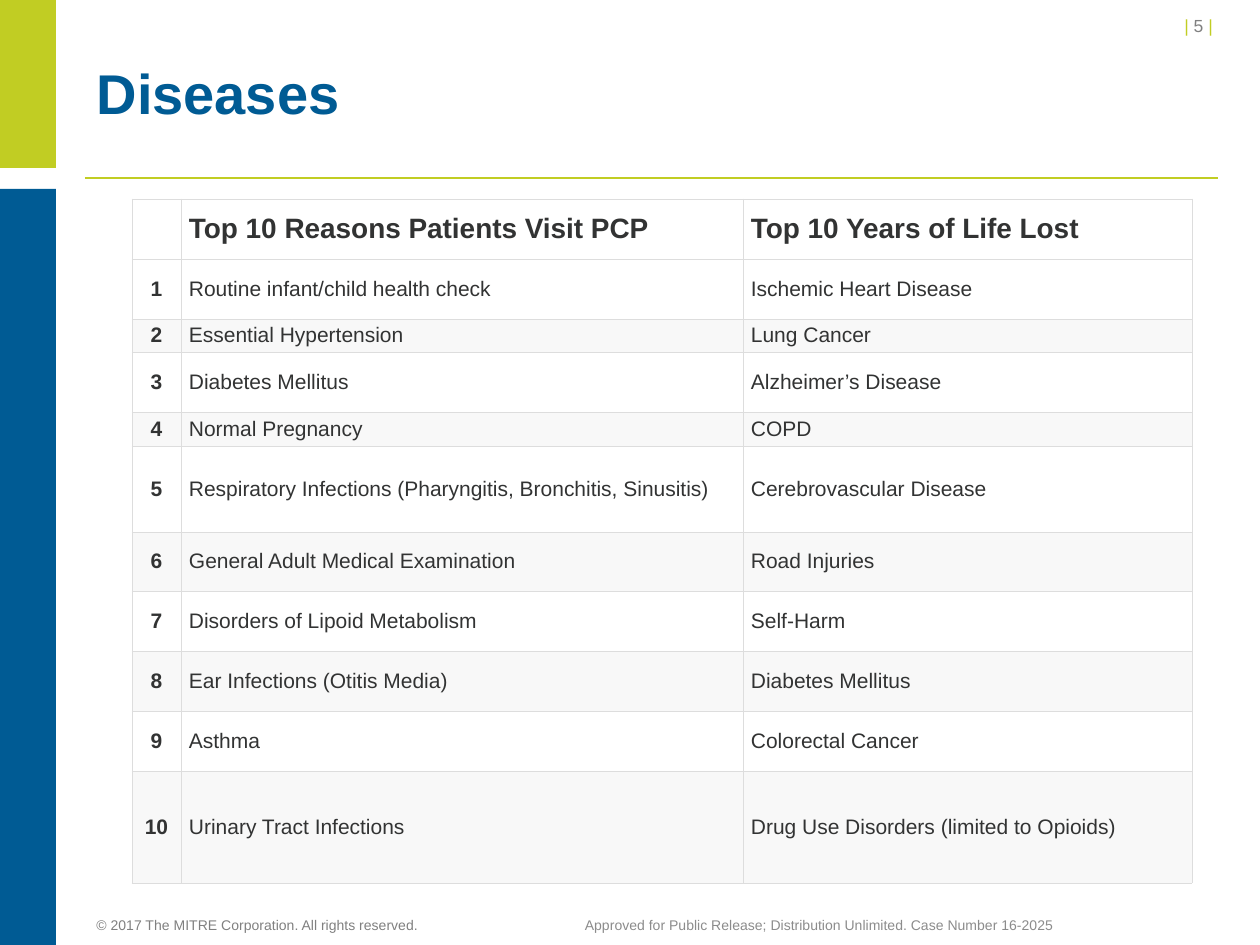
from lxml import etree
from pptx import Presentation
from pptx.dml.color import RGBColor
from pptx.enum.shapes import MSO_CONNECTOR, MSO_SHAPE
from pptx.enum.text import MSO_ANCHOR, PP_ALIGN
from pptx.oxml.ns import qn
from pptx.util import Emu, Pt

LEFT, MID, RIGHT = PP_ALIGN.LEFT, PP_ALIGN.CENTER, PP_ALIGN.RIGHT
TOP, CENTRE, LOW = MSO_ANCHOR.TOP, MSO_ANCHOR.MIDDLE, MSO_ANCHOR.BOTTOM
RECT, LINE = MSO_SHAPE.RECTANGLE, MSO_CONNECTOR.STRAIGHT

TITLE = "Diseases"
HEAD = ("", "Top 10 Reasons Patients Visit PCP", "Top 10 Years of Life Lost")
CAUSES = [
    ("Routine infant/child health check", "Ischemic Heart Disease"),
    ("Essential Hypertension", "Lung Cancer"),
    ("Diabetes Mellitus", "Alzheimer’s Disease"),
    ("Normal Pregnancy", "COPD"),
    ("Respiratory Infections (Pharyngitis, Bronchitis, Sinusitis)",
     "Cerebrovascular Disease"),
    ("General Adult Medical Examination", "Road Injuries"),
    ("Disorders of Lipoid Metabolism", "Self-Harm"),
    ("Ear Infections (Otitis Media)", "Diabetes Mellitus"),
    ("Asthma", "Colorectal Cancer"),
    ("Urinary Tract Infections", "Drug Use Disorders (limited to Opioids)"),
]
COLS = (49, 562, 449)
ROWS = (60, 60, 33, 60, 34, 86, 59, 60, 60, 60, 112)
BARS = [("lime", (0, 0, 56, 168)), ("blue", (0, 189, 56, 756))]
NOTES = [
    ((1009, 9, 221, 34), TOP, {"alignment": RIGHT, "space_after": Pt(6)},
     [("| ", "page", "lime"), ("5 ", "page", "grey"), ("| ", "page", "lime")]),
    ((84, 917, 372, 22), LOW, {"alignment": LEFT, "line_spacing": Pt(13)},
     [("© 2017 The MITRE Corporation. All rights reserved.", "foot", "grey")]),
    ((557, 917, 525, 22), LOW, {"alignment": MID, "line_spacing": Pt(13)},
     [("Approved for Public Release; Distribution Unlimited. "
       "Case Number 16-2025", "foot", "pale")]),
]
THEME = {
    "font": "Arial",
    "ink": {"lime": "C1CD23", "blue": "005B94", "grey": "808080",
            "pale": "8C8C8C", "text": "323333", "edge": "DDDDDD",
            "odd": "FFFFFF", "even": "F8F8F8"},
    "size": {"title": 32, "head": 16, "body": 12, "page": 10, "foot": 8},
}


def px(n):
    return Emu(n * 914400 // 126)


def ink(name):
    return RGBColor.from_string(THEME["ink"][name])


def apply(item, form):
    for key, value in form.items():
        setattr(item, key, value)


def place(item, box):
    apply(item, dict(zip(("left", "top", "width", "height"), map(px, box))))


def write(frame, runs, form, bold=False):
    para = frame.paragraphs[0]
    apply(para, form)
    for text, size, tone in runs:
        run = para.add_run()
        run.text = text
        apply(run.font, {"name": THEME["font"], "bold": bold,
                         "size": Pt(THEME["size"][size])})
        run.font.color.rgb = ink(tone)


def border(cell):
    props = cell._tc.get_or_add_tcPr()
    for side in ("lnL", "lnR", "lnT", "lnB"):
        line = etree.SubElement(props, qn(f"a:{side}"), w=str(Pt(0.5)))
        fill = etree.SubElement(line, qn("a:solidFill"))
        etree.SubElement(fill, qn("a:srgbClr"), val=THEME["ink"]["edge"])


def draw_frame(slide):
    rule = slide.shapes.add_connector(LINE, px(85), px(178), px(1218), px(178))
    rule.line.color.rgb = ink("lime")
    rule.line.width = Pt(1)
    etree.SubElement(rule._element.spPr, qn("a:effectLst"))
    for tone, box in BARS:
        bar = slide.shapes.add_shape(RECT, *map(px, box))
        bar.shadow.inherit = False
        bar.fill.solid()
        bar.fill.fore_color.rgb = ink(tone)
        bar.line.fill.background()
    for box, anchor, form, runs in NOTES:
        frame = slide.shapes.add_textbox(*map(px, box)).text_frame
        apply(frame, {"word_wrap": True, "vertical_anchor": anchor})
        write(frame, runs, form)


def draw_title(slide):
    title = slide.shapes.title
    place(title, (84, 38, 1134, 120))
    title.text_frame.vertical_anchor = CENTRE
    write(title.text_frame, [(TITLE, "title", "blue")],
          {"alignment": LEFT, "line_spacing": Pt(32)}, True)


def draw_table(slide):
    data = [HEAD] + [(str(n), *pair) for n, pair in enumerate(CAUSES, 1)]
    box = (132, 199, sum(COLS), sum(ROWS))
    table = slide.shapes.add_table(
        len(ROWS), len(COLS), *map(px, box)).table
    apply(table, {"first_row": False, "horz_banding": False})
    for col, wide in zip(table.columns, COLS):
        col.width = px(wide)
    for row, high in zip(table.rows, ROWS):
        row.height = px(high)
    pad = {"margin_left": px(8), "margin_right": px(8), "margin_top": px(4),
           "margin_bottom": px(4), "vertical_anchor": CENTRE}
    for r, texts in enumerate(data):
        for c, text in enumerate(texts):
            cell = table.cell(r, c)
            apply(cell, pad)
            border(cell)
            if r:
                cell.fill.solid()
                cell.fill.fore_color.rgb = ink("odd" if r % 2 else "even")
            else:
                cell.fill.background()
            if text:
                write(cell.text_frame,
                      [(text, "body" if r else "head", "text")],
                      {"alignment": LEFT if c else MID}, r == 0 or c == 0)


def main():
    deck = Presentation()
    apply(deck, {"slide_width": px(1260), "slide_height": px(945)})
    slide = deck.slides.add_slide(deck.slide_layouts[5])
    draw_frame(slide)
    draw_title(slide)
    draw_table(slide)
    deck.save("out.pptx")


if __name__ == "__main__":
    main()
